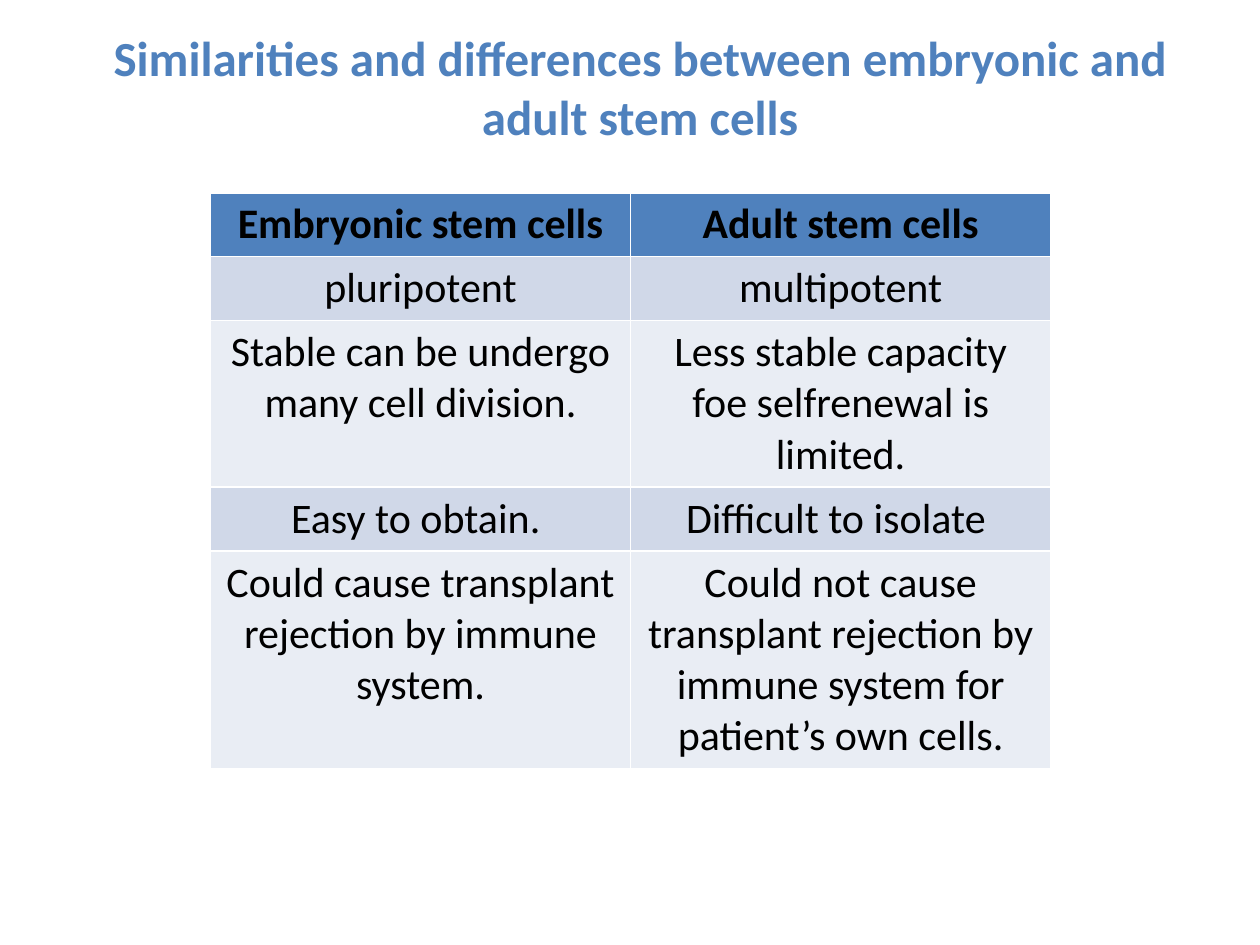
from pptx import Presentation
from pptx.dml.color import RGBColor
from pptx.enum.text import MSO_ANCHOR, PP_ALIGN
from pptx.util import Inches, Pt

CENTER = PP_ALIGN.CENTER
TOP = MSO_ANCHOR.TOP
BLUE = RGBColor(0x4F, 0x81, 0xBD)
DARK_BAND = RGBColor(0xD0, 0xD8, 0xE8)
LIGHT_BAND = RGBColor(0xE9, 0xED, 0xF4)
BLACK = RGBColor(0, 0, 0)
TITLE_ONLY = 5

ROWS = [
    ("Embryonic stem cells", "Adult stem cells"),
    ("pluripotent", "multipotent"),
    ("Stable can be undergo many cell division.",
     "Less stable capacity foe selfrenewal is limited."),
    ("Easy to obtain. ", "Difficult to isolate "),
    ("Could cause transplant rejection by immune system.",
     "Could not cause transplant rejection by immune system for patient’s own cells."),
]
ROW_FILLS = [BLUE, DARK_BAND, LIGHT_BAND, DARK_BAND, LIGHT_BAND]


def write_text(text_frame, text, size, color, bold=False):
    paragraph = text_frame.paragraphs[0]
    paragraph.alignment = CENTER
    run = paragraph.add_run()
    run.text = text
    run.font.name = "Calibri"
    run.font.size = Pt(size)
    run.font.bold = bold
    run.font.color.rgb = color


presentation = Presentation()
presentation.slide_width = Inches(10)
presentation.slide_height = Inches(7.5)
slide = presentation.slides.add_slide(presentation.slide_layouts[TITLE_ONLY])

title = slide.shapes.title
title.left, title.top = Inches(0.58), Inches(0.17)
title.width, title.height = Inches(9), Inches(1.1)
title.text_frame.vertical_anchor = TOP
write_text(title.text_frame,
           "Similarities and differences between embryonic and adult stem cells",
           size=28, color=BLUE, bold=True)

table = slide.shapes.add_table(len(ROWS), 2, Inches(1.67), Inches(1.53),
                               Inches(6.67), Inches(2.05)).table
for row_index, (texts, fill_color) in enumerate(zip(ROWS, ROW_FILLS)):
    for column_index, text in enumerate(texts):
        cell = table.cell(row_index, column_index)
        cell.fill.solid()
        cell.fill.fore_color.rgb = fill_color
        write_text(cell.text_frame, text, size=24, color=BLACK, bold=row_index == 0)

presentation.save("out.pptx")
